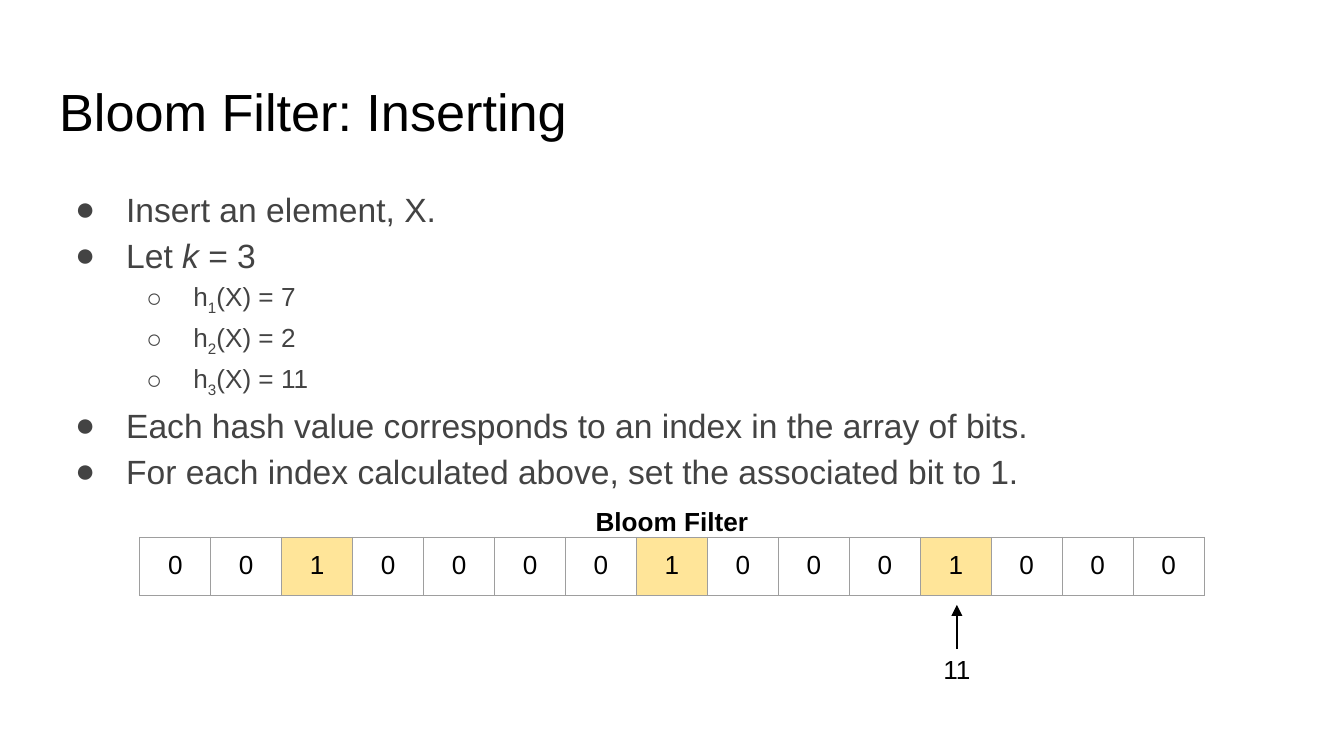
from lxml.etree import SubElement
from pptx import Presentation
from pptx.dml.color import RGBColor
from pptx.enum.shapes import MSO_CONNECTOR as Connector
from pptx.enum.text import MSO_ANCHOR as Anchor, PP_ALIGN as Align
from pptx.oxml.ns import qn
from pptx.util import Emu, Inches, Pt

# Content: a run is plain text or (text, style)
TITLE = "Bloom Filter: Inserting"
HASHES = [7, 2, 11]
BULLETS = [
    (0, ["Insert an element, X."]),
    (0, ["Let ", ("k", "italic"), f" = {len(HASHES)}"]),
    *[(1, ["h", (str(n), "sub"), f"(X) = {value}"]) for n, value in enumerate(HASHES, 1)],
    (0, ["Each hash value corresponds to an index in the array of bits."]),
    (0, ["For each index calculated above, set the associated bit to 1."]),
]
ARRAY_LABEL = "Bloom Filter"
BIT_COUNT = 15
MARKED_INDEX = HASHES[-1]

THEME = {
    "font": "Arial", "ink": "000000", "body": "434343",
    "set_bit": "FFE599", "border": "9E9E9E",
    "title_size": 28, "body_size": 18, "small_size": 14, "line": 0.75,
}
# Bullet levels: glyph, text size, left margin, hanging indent
LEVELS = [("●", THEME["body_size"], 0.5, 0.38), ("○", THEME["small_size"], 1, 0.35)]

# Layout in inches, on a 16:9 slide
SLIDE_WIDTH = 10
SLIDE_HEIGHT = SLIDE_WIDTH * 9 / 16
MARGIN, CONTENT_WIDTH = 0.34, 9.32
ARRAY_LEFT, ARRAY_TOP, ARRAY_WIDTH, ARRAY_HEIGHT = 1.04, 4, 7.92, 0.42
MARKER_X = 7.12


def write(paragraph, *runs, size=THEME["small_size"], color=THEME["ink"],
          bold=False, align=Align.LEFT):
    paragraph.alignment = align
    for item in runs:
        text, style = item if isinstance(item, tuple) else (item, None)
        run = paragraph.add_run()
        run.text = text
        run.font.name, run.font.size, run.font.bold = THEME["font"], Pt(size), bold
        run.font.italic = style == "italic"
        run.font.color.rgb = RGBColor.from_string(color)
        if style == "sub":
            run._r.get_or_add_rPr().set("baseline", "-25000")


def set_margins(holder):
    holder.margin_left = holder.margin_right = Inches(0.1)
    holder.margin_top = holder.margin_bottom = Inches(0.1)


def set_frame(frame):
    frame.word_wrap = True
    frame.vertical_anchor = Anchor.TOP
    set_margins(frame)
    return frame


def add_box(slide, left, top, width, height):
    box = slide.shapes.add_textbox(Inches(left), Inches(top), Inches(width), Inches(height))
    return set_frame(box.text_frame)


def set_bullet(paragraph, glyph, margin, hanging):
    props = paragraph._p.get_or_add_pPr()
    props.set("marL", str(Inches(margin)))
    props.set("indent", str(-Inches(hanging)))
    color = SubElement(props, qn("a:buClr"))
    SubElement(color, qn("a:srgbClr"), val=THEME["body"])
    SubElement(props, qn("a:buFont"), typeface=THEME["font"])
    SubElement(props, qn("a:buChar"), char=glyph)


def set_borders(cell):
    props = cell._tc.get_or_add_tcPr()
    for side in "LRTB":
        line = SubElement(props, qn(f"a:ln{side}"), w=str(Pt(THEME["line"])))
        fill = SubElement(line, qn("a:solidFill"))
        SubElement(fill, qn("a:srgbClr"), val=THEME["border"])


def add_bullets(slide):
    frame = add_box(slide, MARGIN, 1.26, CONTENT_WIDTH, 1.64)
    for i, (level, runs) in enumerate(BULLETS):
        paragraph = frame.add_paragraph() if i else frame.paragraphs[0]
        glyph, size, margin, hanging = LEVELS[level]
        paragraph.level = level
        paragraph.line_spacing = 1.15
        write(paragraph, *runs, size=size, color=THEME["body"])
        set_bullet(paragraph, glyph, margin, hanging)


def add_bit_array(slide):
    bits = slide.shapes.add_table(
        1, BIT_COUNT, Inches(ARRAY_LEFT), Inches(ARRAY_TOP),
        Inches(ARRAY_WIDTH), Inches(ARRAY_HEIGHT)).table
    bits.first_row = bits.horz_banding = False
    for index, column in enumerate(bits.columns):
        column.width = Emu(Inches(ARRAY_WIDTH) // BIT_COUNT)
        cell = bits.cell(0, index)
        set_margins(cell)
        set_borders(cell)
        is_set = index in HASHES
        if is_set:
            cell.fill.solid()
            cell.fill.fore_color.rgb = RGBColor.from_string(THEME["set_bit"])
        else:
            cell.fill.background()
        write(cell.text_frame.paragraphs[0], str(int(is_set)), align=Align.CENTER)


def add_marker(slide):
    arrow = slide.shapes.add_connector(
        Connector.STRAIGHT, Inches(MARKER_X), Inches(4.83), Inches(MARKER_X), Inches(4.5))
    arrow.line.color.rgb = RGBColor.from_string(THEME["ink"])
    arrow.line.width = Pt(THEME["line"])
    SubElement(arrow.line._get_or_add_ln(), qn("a:tailEnd"), type="triangle")
    SubElement(arrow._element.spPr, qn("a:effectLst"))
    label = add_box(slide, MARKER_X - 0.21, 4.76, 0.42, 0.38)
    write(label.paragraphs[0], str(MARKED_INDEX), align=Align.CENTER)


def main():
    deck = Presentation()
    deck.slide_width, deck.slide_height = Inches(SLIDE_WIDTH), Inches(SLIDE_HEIGHT)
    slide = deck.slides.add_slide(deck.slide_layouts[5])

    # Title
    title = slide.shapes.title
    title.left, title.top = Inches(MARGIN), Inches(0.49)
    title.width, title.height = Inches(CONTENT_WIDTH), Inches(0.63)
    write(set_frame(title.text_frame).paragraphs[0], TITLE, size=THEME["title_size"])

    # Steps, then the bit array with its label and index marker
    add_bullets(slide)
    add_bit_array(slide)
    label = add_box(slide, 4.12, 3.66, 1.76, 0.43)
    write(label.paragraphs[0], ARRAY_LABEL, bold=True, align=Align.CENTER)
    add_marker(slide)

    deck.save("out.pptx")


if __name__ == "__main__":
    main()
